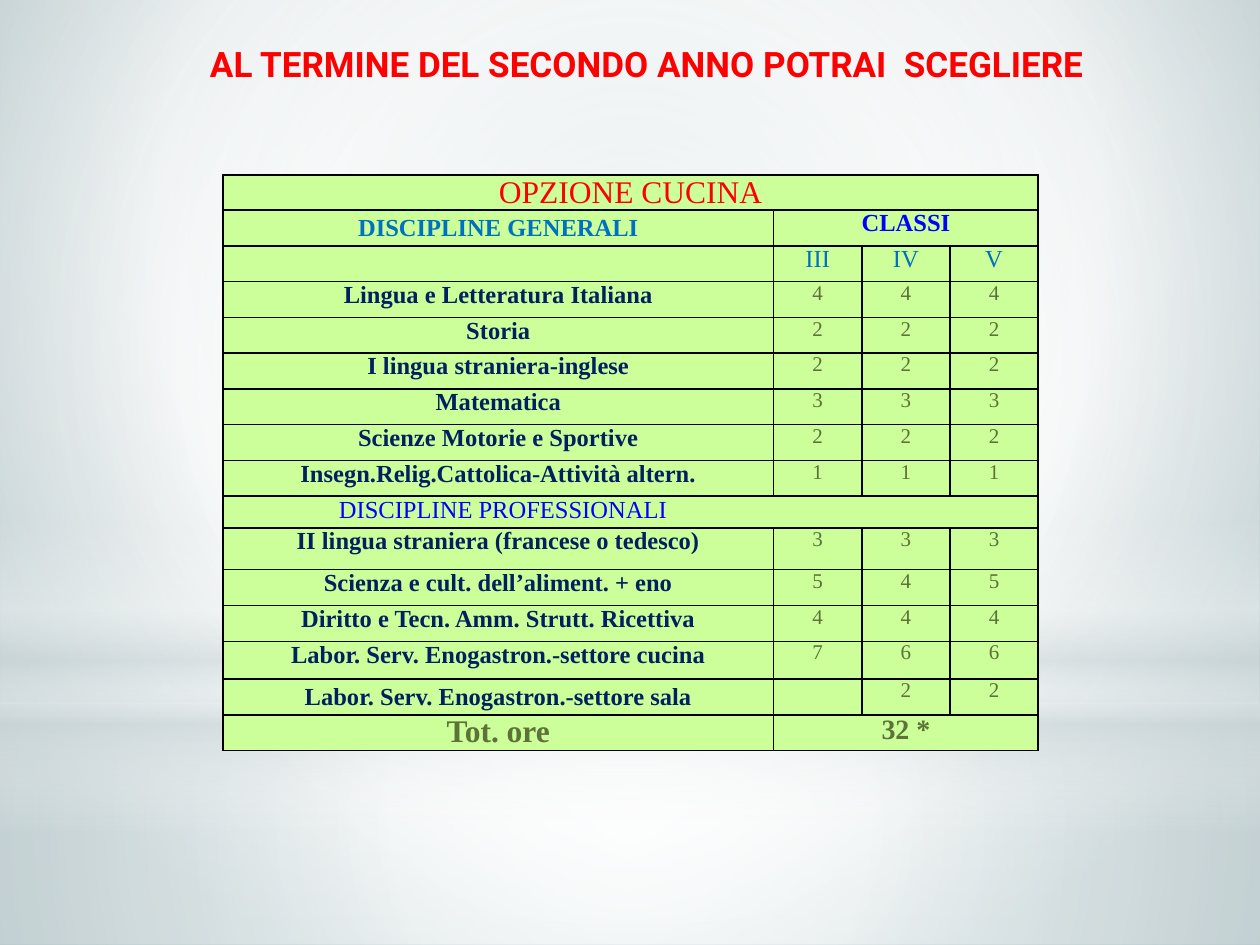
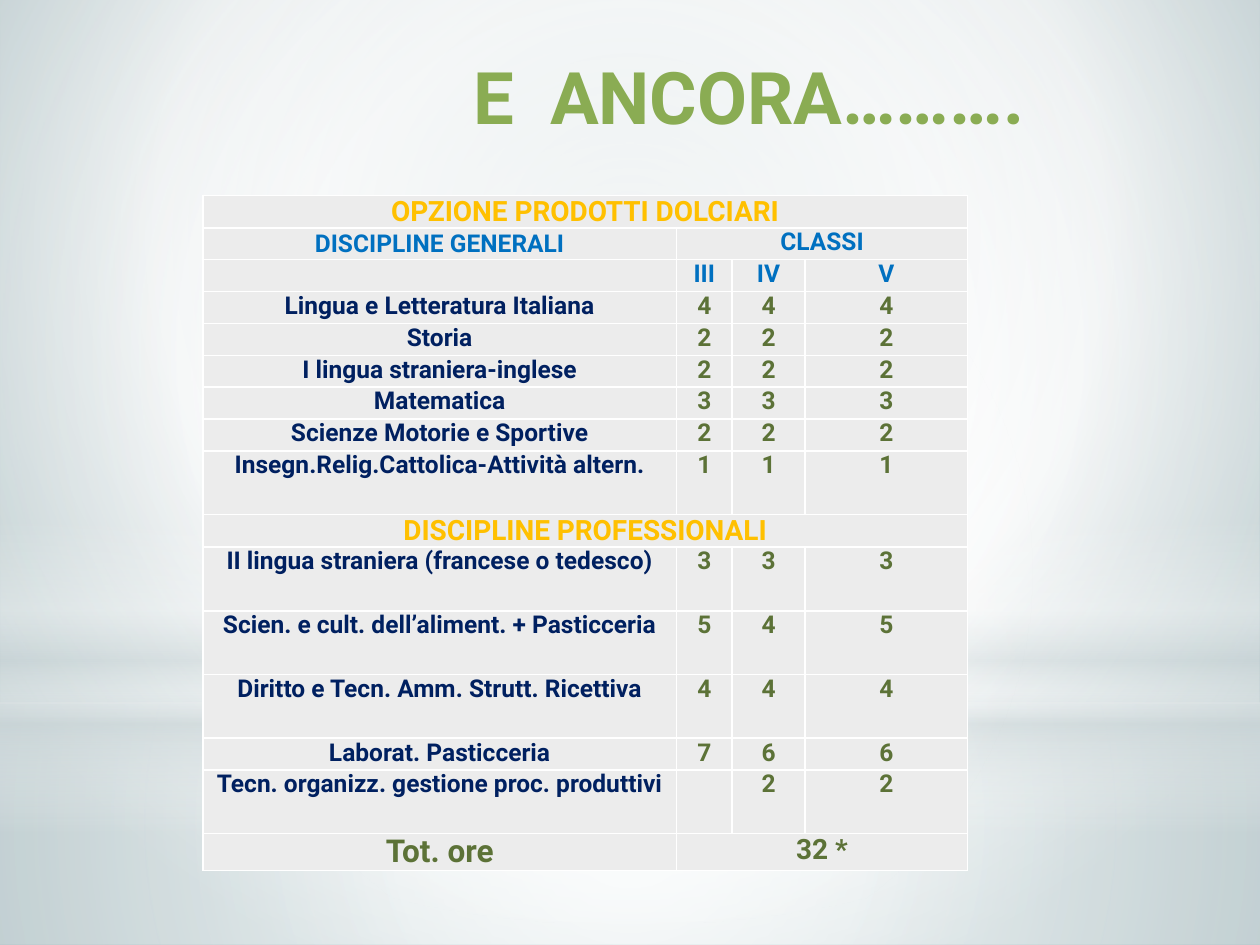
from typing import NamedTuple, Optional

from lxml.etree import SubElement
from pptx import Presentation
from pptx.dml.color import RGBColor
from pptx.enum.shapes import MSO_SHAPE
from pptx.enum.text import MSO_ANCHOR, MSO_AUTO_SIZE, PP_ALIGN
from pptx.oxml import parse_xml
from pptx.oxml.ns import nsdecls, qn
from pptx.util import Inches, Pt

COLORS = {
    "white": "FFFFFF", "black": "000000", "mist": "CDD7D9", "haze": "C2D0D3",
    "teal": "9AB5BA", "red": "FF0000", "lime": "CCFF99", "gray": "ECECEC",
    "sky": "0070C0", "blue": "0000FF", "navy": "002060", "olive": "5C7237",
    "leaf": "8AAC53", "gold": "FFC000",
}
SANS, SERIF = "Roboto", "Times New Roman"


class Stop(NamedTuple):
    pos: int
    color: str
    alpha: int = 100


class Glow(NamedTuple):
    shape: MSO_SHAPE
    top: float
    height: float
    stops: list[Stop]
    linear: bool = False


class Style(NamedTuple):
    size: float
    color: str
    bold: bool = True


class Title(NamedTuple):
    text: str
    box: tuple[float, float, float, float]
    style: Style


class Subject(NamedTuple):
    name: str
    hours: tuple[str, str, str]
    anchor: MSO_ANCHOR = MSO_ANCHOR.TOP


class Plan(NamedTuple):
    """A timetable: row_shares divide the height, styles name each kind of cell."""
    option: str
    professional: list[Subject]
    left: float
    top: float
    height: float
    columns: list[float]
    row_shares: list[int]
    font: str
    fill: str
    border: str
    styles: dict[str, Style]
    section_indent: Optional[float] = None


CENTER = (50, 50, 50, 50)
BACKGROUND = [Stop(0, "haze"), Stop(60, "white"), Stop(100, "teal")]
GLOWS = [
    Glow(MSO_SHAPE.RECTANGLE, 5.58, 1.92,
         [Stop(0, "white", 91), Stop(37, "white", 76), Stop(100, "mist", 79)]),
    Glow(MSO_SHAPE.RECTANGLE, 0, 5.58,
         [Stop(0, "white", 89), Stop(48, "white", 62), Stop(100, "mist", 79)]),
    Glow(MSO_SHAPE.RECTANGLE, 4.12, 2.5,
         [Stop(0, "white", 0), Stop(29, "white", 30), Stop(45, "mist", 40),
          Stop(55, "white", 26), Stop(65, "mist", 60), Stop(100, "white", 0)], True),
    Glow(MSO_SHAPE.OVAL, 1.75, 5.58, [Stop(0, "white"), Stop(56, "white", 0)]),
]
YEARS = ("III", "IV", "V")
GENERAL = [
    Subject("Lingua e Letteratura Italiana", ("4",) * 3),
    Subject("Storia", ("2",) * 3),
    Subject("I lingua straniera-inglese", ("2",) * 3),
    Subject("Matematica", ("3",) * 3),
    Subject("Scienze Motorie e Sportive", ("2",) * 3),
    Subject("Insegn.Relig.Cattolica-Attività altern.", ("1",) * 3),
]
LANGUAGE = Subject("II lingua straniera (francese o tedesco)", ("3",) * 3)
LAW = Subject("Diritto e Tecn. Amm. Strutt. Ricettiva", ("4",) * 3)
SHARED_STYLES = {
    "general": Style(14, "sky"), "subject": Style(14, "navy"),
    "total": Style(18, "olive"), "sum": Style(16, "olive"),
}
COOKING = Plan(
    "OPZIONE CUCINA",
    [LANGUAGE,
     Subject("Scienza e cult. dell’aliment. + eno", ("5", "4", "5")),
     LAW,
     Subject("Labor. Serv. Enogastron.-settore cucina", ("7", "6", "6")),
     Subject("Labor. Serv. Enogastron.-settore sala", ("", "2", "2"), MSO_ANCHOR.MIDDLE)],
    1.77, 1.39, 4.56, [4.37, 0.7, 0.7, 0.7],
    [34] + [36] * 8 + [32, 42, 36, 36, 38, 36, 36],
    SERIF, "lime", "black",
    SHARED_STYLES | {
        "option": Style(18, "red", False), "classes": Style(14, "blue"),
        "year": Style(14, "sky", False), "hours": Style(12, "olive", False),
        "section": Style(14, "blue", False)},
    0.87)
PASTRY = Plan(
    "OPZIONE PRODOTTI DOLCIARI",
    [LANGUAGE,
     Subject("Scien. e cult. dell’aliment. + Pasticceria", ("5", "4", "5")),
     LAW,
     Subject("Laborat. Pasticceria", ("7", "6", "6")),
     Subject("Tecn. organizz. gestione proc. produttivi", ("", "2", "2"))],
    1.61, 1.55, 5.35, [3.76, 0.44, 0.58, 1.29],
    [32] * 8 + [64, 32, 64, 64, 64, 32, 64, 37],
    SANS, "gray", "white",
    SHARED_STYLES | {
        "option": Style(16, "gold"), "classes": Style(14, "sky"),
        "year": Style(14, "sky"), "hours": Style(14, "olive"),
        "section": Style(16, "gold")})
SLIDES = [
    (Title("AL TERMINE DEL SECONDO ANNO POTRAI  SCEGLIERE",
           (1.06, 0.29, 7.64, 0.58), Style(20, "red")), COOKING),
    (Title("E  ANCORA……….", (1.77, 0.36, 6.46, 0.55), Style(41.4, "leaf")), PASTRY),
]


def gradient(stops: list[Stop], focus=CENTER, linear: bool = False):
    """Return a gradient fill element."""
    grad = parse_xml(f'<a:gradFill {nsdecls("a")} rotWithShape="1"><a:gsLst/></a:gradFill>')
    for stop in stops:
        gs = SubElement(grad[0], qn("a:gs"), pos=str(stop.pos * 1000))
        color = SubElement(gs, qn("a:srgbClr"), val=COLORS[stop.color])
        if stop.alpha < 100:
            SubElement(color, qn("a:alpha"), val=str(stop.alpha * 1000))
    if linear:
        SubElement(grad, qn("a:lin"), ang="5400000", scaled="0")
    else:
        circle = SubElement(grad, qn("a:path"), {"path": "circle"})
        sides = {side: str(v * 1000) for side, v in zip("ltrb", focus)}
        SubElement(circle, qn("a:fillToRect"), sides)
    return grad


def build_master(prs, s) -> None:
    """Give the master its background and glows, shaped on slide s."""
    master = prs.slide_master
    master.background.fill.solid()
    bg = master.element.find(".//" + qn("p:bgPr"))
    bg.replace(bg[0], gradient(BACKGROUND, (20, 10, 20, 60)))
    tree = master.element.find(".//" + qn("p:spTree"))
    for i, glow in enumerate(GLOWS):
        sp = s.shapes.add_shape(glow.shape, 0, Inches(glow.top),
                                prs.slide_width, Inches(glow.height))
        sp.shadow.inherit = False
        sp.line.fill.background()
        sp.element.spPr.insert(2, gradient(glow.stops, linear=glow.linear))
        tree.insert(2 + i, sp.element)


def add_run(p, text: str, font: str, style: Style) -> None:
    """Add one styled run to a paragraph."""
    r = p.add_run()
    r.text = text
    r.font.name, r.font.size, r.font.bold = font, Pt(style.size), style.bold
    r.font.color.rgb = RGBColor.from_string(COLORS[style.color])


def set_title(s, title: Title) -> None:
    """Place and fill the title placeholder."""
    sp = s.shapes.title
    sp.left, sp.top, sp.width, sp.height = map(Inches, title.box)
    tf = sp.text_frame
    tf.word_wrap, tf.auto_size = True, MSO_AUTO_SIZE.NONE
    tf.vertical_anchor = MSO_ANCHOR.TOP
    p = tf.paragraphs[0]
    p.alignment = PP_ALIGN.RIGHT
    add_run(p, title.text, SANS, title.style)


def format_cell(cell, plan: Plan) -> None:
    """Set margins, fill and borders of a cell."""
    cell.margin_left = cell.margin_right = Inches(0.05)
    cell.margin_top = cell.margin_bottom = 0
    tcPr = cell._tc.get_or_add_tcPr()
    for side in ("lnL", "lnR", "lnT", "lnB"):
        ln = SubElement(tcPr, qn(f"a:{side}"), w=str(Pt(1)))
        SubElement(SubElement(ln, qn("a:solidFill")), qn("a:srgbClr"),
                   val=COLORS[plan.border])
    cell.fill.solid()
    cell.fill.fore_color.rgb = RGBColor.from_string(COLORS[plan.fill])


def add_plan(s, plan: Plan) -> None:
    """Draw a timetable."""
    count = len(plan.row_shares)
    table = s.shapes.add_table(count, 4, Inches(plan.left), Inches(plan.top),
                               Inches(sum(plan.columns)), Inches(plan.height)).table
    table.first_row = table.horz_banding = False
    for column, width in zip(table.columns, plan.columns):
        column.width = Inches(width)
    for row, share in zip(table.rows, plan.row_shares):
        row.height = Inches(plan.height * share / sum(plan.row_shares))
    for cell in table.iter_cells():
        format_cell(cell, plan)

    def put(row: int, col: int, text: str, kind: str,
            anchor=MSO_ANCHOR.TOP, last: Optional[int] = None):
        cell = table.cell(row, col)
        if last:
            cell.merge(table.cell(row, last))
        cell.vertical_anchor = anchor
        p = cell.text_frame.paragraphs[0]
        p.alignment = PP_ALIGN.CENTER
        if text:
            add_run(p, text, plan.font, plan.styles[kind])
        else:
            p._p.get_or_add_endParaRPr().set("sz", "1200")
        return p

    def put_hours(row: int, name: str, values, kind: str, anchor=MSO_ANCHOR.TOP) -> None:
        put(row, 0, name, "subject", anchor)
        for col, value in enumerate(values, 1):
            put(row, col, value, kind)

    put(0, 0, plan.option, "option", MSO_ANCHOR.MIDDLE, 3)
    put(1, 0, "DISCIPLINE GENERALI", "general", MSO_ANCHOR.MIDDLE)
    put(1, 1, "CLASSI", "classes", last=3)
    put_hours(2, "", YEARS, "year")
    section = 3 + len(GENERAL)
    p = put(section, 0, "DISCIPLINE PROFESSIONALI", "section", last=3)
    if plan.section_indent:
        p.alignment = PP_ALIGN.LEFT
        p._p.get_or_add_pPr().set("marL", str(Inches(plan.section_indent)))
    for first, subjects in ((3, GENERAL), (section + 1, plan.professional)):
        for row, subject in enumerate(subjects, first):
            put_hours(row, subject.name, subject.hours, "hours", subject.anchor)
    put(count - 1, 0, "Tot. ore", "total")
    put(count - 1, 1, "32 *", "sum", last=3)


def main() -> None:
    """Build the presentation."""
    prs = Presentation()
    prs.slide_width, prs.slide_height = Inches(10), Inches(7.5)
    for i, (title, plan) in enumerate(SLIDES):
        s = prs.slides.add_slide(prs.slide_layouts[5])
        if i == 0:
            build_master(prs, s)
        set_title(s, title)
        add_plan(s, plan)
    prs.save("out.pptx")


if __name__ == "__main__":
    main()
